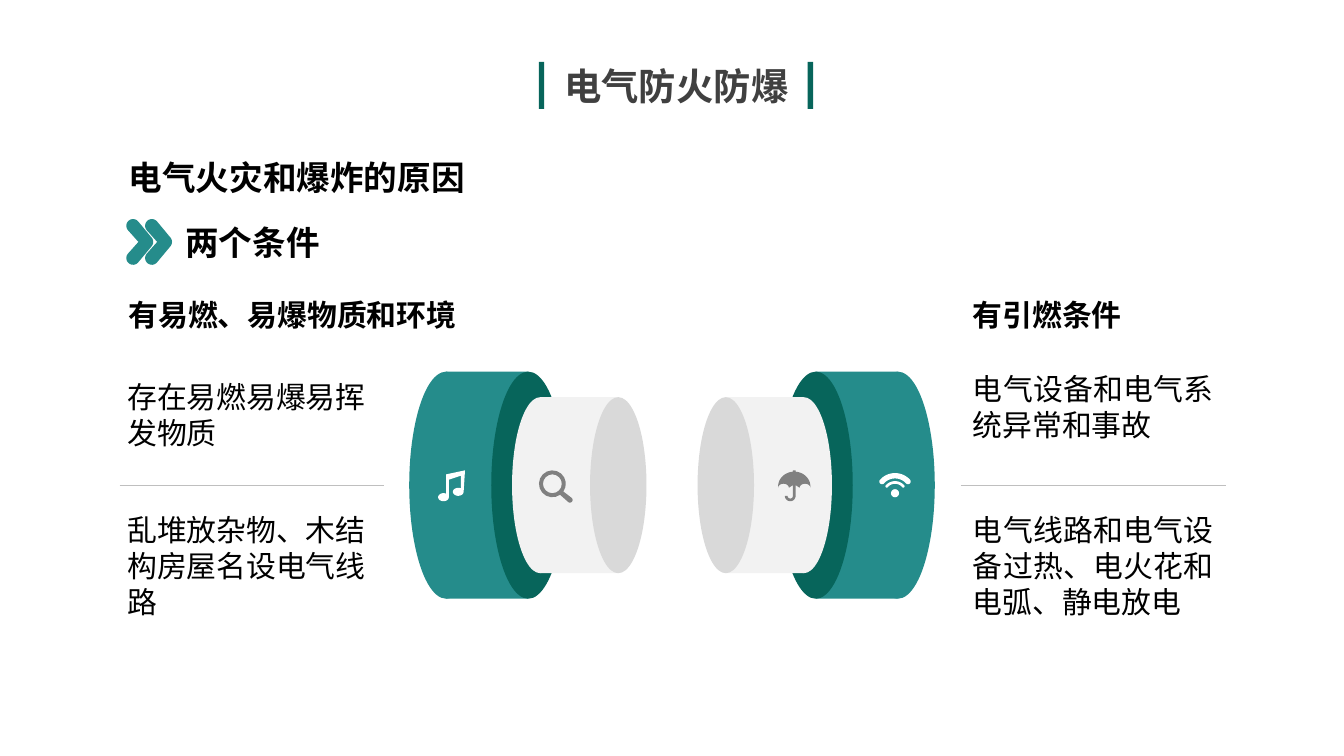
from math import cos, radians, sin

from lxml import etree
from pptx import Presentation
from pptx.dml.color import RGBColor
from pptx.enum.shapes import MSO_CONNECTOR, MSO_SHAPE
from pptx.enum.text import MSO_AUTO_SIZE, PP_ALIGN
from pptx.oxml.ns import qn
from pptx.util import Inches, Pt

RECT, OVAL = MSO_SHAPE.RECTANGLE, MSO_SHAPE.OVAL
STRAIGHT = MSO_CONNECTOR.STRAIGHT
LEFT, JUSTIFY = PP_ALIGN.LEFT, PP_ALIGN.JUSTIFY
NO_AUTOSIZE = MSO_AUTO_SIZE.NONE

TEAL = RGBColor(0x25, 0x8C, 0x8B)
DARK_TEAL = RGBColor(0x07, 0x65, 0x5B)
PALE = RGBColor(0xF2, 0xF2, 0xF2)
LIGHT_GREY = RGBColor(0xD9, 0xD9, 0xD9)
RULE_GREY = RGBColor(0xBF, 0xBF, 0xBF)
ICON_GREY = RGBColor(0x80, 0x80, 0x80)
TITLE_GREY = RGBColor(0x40, 0x40, 0x40)
BLACK = RGBColor(0, 0, 0)
WHITE = RGBColor(0xFF, 0xFF, 0xFF)

CJK_SANS = "Noto Sans CJK SC"
MIDDLE_Y = 3.61


def add_text(slide, text, x, y, w, h, size=16, font="Arial", east_asian=None,
             color=BLACK, bold=False, align=LEFT, wrap=True):
    tf = slide.shapes.add_textbox(Inches(x), Inches(y), Inches(w), Inches(h)).text_frame
    tf.word_wrap = wrap
    tf.auto_size = NO_AUTOSIZE
    p = tf.paragraphs[0]
    p.alignment = align
    r = p.add_run()
    r.text = text
    r.font.size = Pt(size)
    r.font.bold = bold
    r.font.name = font
    r.font.color.rgb = color
    ea = etree.SubElement(r.font._element, qn("a:ea"))
    ea.set("typeface", east_asian or font)


def paint(sp, color):
    sp.shadow.inherit = False
    sp.fill.solid()
    sp.fill.fore_color.rgb = color
    sp.line.fill.background()


def add_box(slide, kind, x, y, w, h, color):
    paint(slide.shapes.add_shape(kind, Inches(x), Inches(y), Inches(w), Inches(h)), color)


def add_rule(slide, x, y, w):
    line = slide.shapes.add_connector(STRAIGHT, Inches(x), Inches(y), Inches(x + w), Inches(y))
    line.line.color.rgb = RULE_GREY
    line.line.width = Pt(0.25)
    etree.SubElement(line._element.spPr, qn("a:effectLst"))


def add_outline(slide, contours, color):
    """Draw one filled freeform from lists of points in inches."""
    contours = [[(Inches(x), Inches(y)) for x, y in c] for c in contours]
    builder = slide.shapes.build_freeform(*contours[0][0])
    for i, contour in enumerate(contours):
        if i:
            builder.move_to(*contour[0])
        builder.add_line_segments(contour[1:], close=True)
    paint(builder.convert_to_shape(), color)


def arc(cx, cy, rx, start, end, ry=None, steps=16):
    """Points on an elliptic arc; degrees run clockwise from the right."""
    ry = ry or rx
    angles = [radians(start + (end - start) * i / steps) for i in range(steps + 1)]
    return [(cx + rx * cos(a), cy + ry * sin(a)) for a in angles]


def band(cx, cy, radius, half, start, end):
    """A thick arc with round ends."""
    (x0, y0), (x1, y1) = (arc(cx, cy, radius, a, a)[0] for a in (start, end))
    return (arc(cx, cy, radius + half, start, end) + arc(x1, y1, half, end, end + 180)
            + arc(cx, cy, radius - half, end, start) + arc(x0, y0, half, start + 180, start + 360))


def chevron(x):
    return (arc(x, 1.68, 0.05, 140, 320) + arc(x + 0.1, 1.8, 0.05, -40, 40)
            + arc(x, 1.92, 0.05, 40, 220) + [(x + 0.04, 1.8)])


def add_drum(slide, back_x, front_x, width, height, side, face):
    """A lying cylinder; back_x and front_x are the centres of its ends."""
    top = MIDDLE_Y - height / 2
    add_box(slide, OVAL, back_x - width / 2, top, width, height, side)
    add_box(slide, RECT, min(back_x, front_x), top, abs(front_x - back_x), height, side)
    add_box(slide, OVAL, front_x - width / 2, top, width, height, face)


def add_icons(slide):
    wifi = [arc(6.66, 3.67, 0.03, 0, 360),
            band(6.66, 3.67, 0.08, 0.01, 220, 320),
            band(6.66, 3.67, 0.13, 0.02, 222, 318)]
    note = ([(3.46, 3.5), (3.32, 3.53)] + arc(3.3, 3.7, 0.04, -60, -360, ry=0.03)
            + [(3.34, 3.57), (3.43, 3.54)] + arc(3.41, 3.66, 0.04, -60, -360, ry=0.03))
    umbrella = (arc(5.91, 3.62, 0.12, 180, 265, ry=0.11) + [(5.9, 3.5), (5.92, 3.5)]
                + arc(5.91, 3.62, 0.12, 275, 360, ry=0.11)
                + arc(5.99, 3.63, 0.04, 360, 180, ry=0.03) + [(5.92, 3.61)]
                + arc(5.88, 3.69, 0.04, 0, 180) + arc(5.88, 3.69, 0.02, 180, 0)
                + [(5.9, 3.61)] + arc(5.83, 3.63, 0.04, 360, 180, ry=0.03))
    magnifier = [arc(4.11, 3.6, 0.1, 55, 395) + arc(4.24, 3.72, 0.02, -45, 135),
                 arc(4.11, 3.6, 0.07, 360, 0)]
    add_outline(slide, wifi, WHITE)
    add_outline(slide, [note], WHITE)
    add_outline(slide, [umbrella], ICON_GREY)
    add_outline(slide, magnifier, ICON_GREY)


def main():
    prs = Presentation()
    prs.slide_width = Inches(10)
    prs.slide_height = prs.slide_width * 9 // 16
    slide = prs.slides.add_slide(prs.slide_layouts[6])

    # Headings
    add_text(slide, "电气火灾和爆炸的原因", 0.86, 1.12, 5.78, 0.47, size=18,
             font="Times New Roman", east_asian=CJK_SANS, bold=True, align=JUSTIFY)
    add_outline(slide, [chevron(0.99), chevron(1.13)], TEAL)
    add_text(slide, "两个条件", 1.28, 1.6, 5.21, 0.4, size=18, bold=True)

    # Title between two bars
    for x in (4.01, 6.01):
        add_box(slide, RECT, x, 0.46, 0.04, 0.35, DARK_TEAL)
    add_text(slide, "电气防火防爆", 4.1, 0.42, 1.87, 0.44, size=20,
             font=CJK_SANS, color=TITLE_GREY, bold=True, wrap=False)

    # Left condition
    add_text(slide, "有易燃、易爆物质和环境", 0.86, 2.16, 2.64, 0.37, bold=True, wrap=False)
    add_text(slide, "存在易燃易爆易挥发物质", 0.85, 2.77, 2.19, 0.64)
    add_text(slide, "乱堆放杂物、木结构房屋名设电气线路", 0.85, 3.76, 2.03, 0.91)

    # Right condition
    add_text(slide, "有引燃条件", 7.14, 2.16, 1.31, 0.37, bold=True, wrap=False)
    add_text(slide, "电气设备和电气系统异常和事故", 7.14, 2.71, 1.99, 0.64, align=JUSTIFY)
    add_text(slide, "电气线路和电气设备过热、电火花和电弧、静电放电",
             7.14, 3.76, 1.99, 0.91, align=JUSTIFY)

    # Mirrored plug: a wide drum and a narrow one on each side
    for mirror in (lambda x: x, lambda x: 10 - x):
        add_drum(slide, mirror(3.32), mirror(3.93), 0.55, 1.69, TEAL, DARK_TEAL)
        add_drum(slide, mirror(4.02), mirror(4.6), 0.42, 1.31, PALE, LIGHT_GREY)

    # Rules between the details
    for x in (0.89, 7.15):
        add_rule(slide, x, MIDDLE_Y, 1.97)

    add_icons(slide)

    prs.save("out.pptx")


if __name__ == "__main__":
    main()
